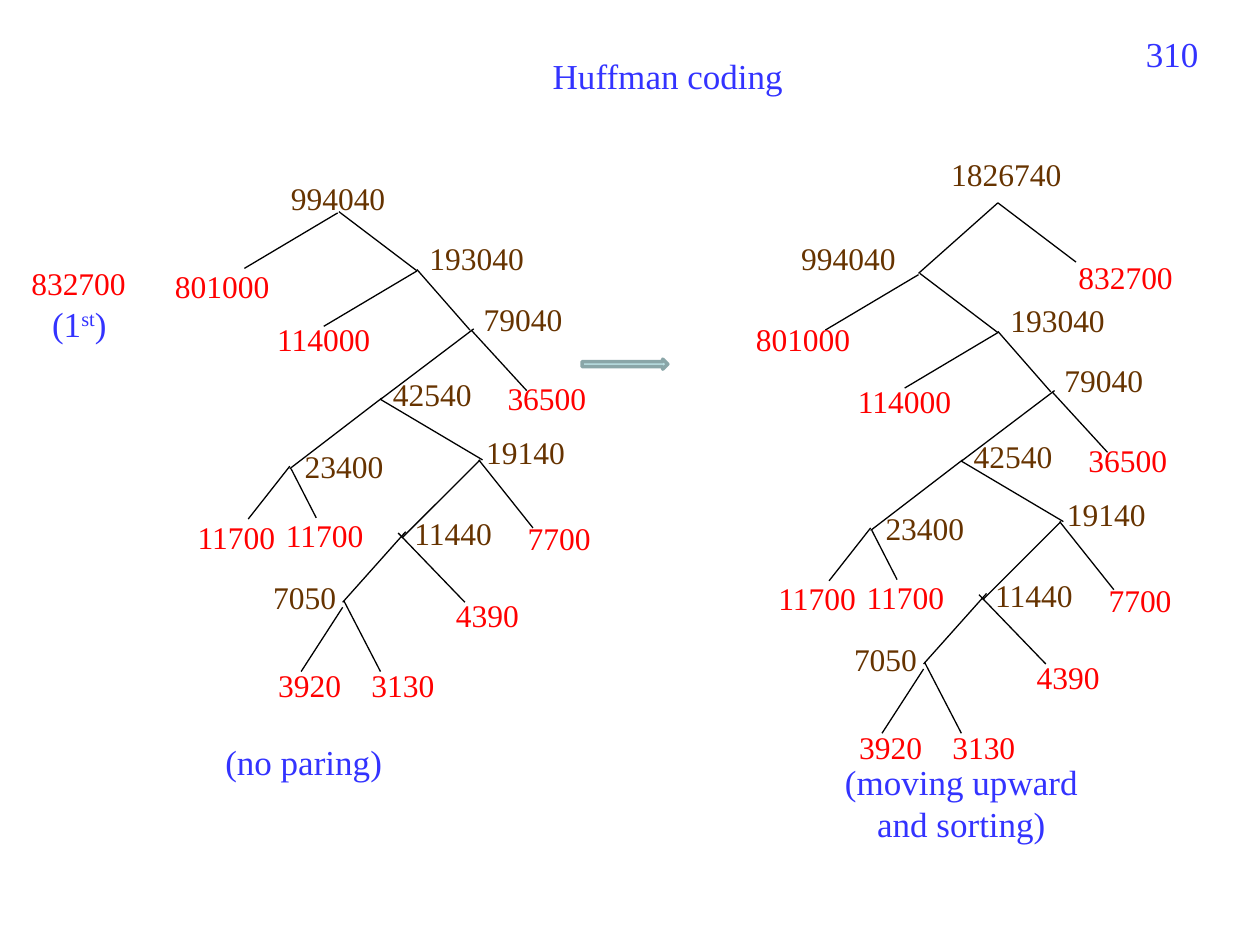
from dataclasses import dataclass
from lxml.etree import SubElement
from pptx import Presentation
from pptx.dml.color import RGBColor
from pptx.enum.shapes import MSO_CONNECTOR, MSO_SHAPE
from pptx.enum.text import MSO_ANCHOR, MSO_AUTO_SIZE, PP_ALIGN
from pptx.oxml.ns import qn
from pptx.util import Inches, Pt


@dataclass(frozen=True)
class Theme:
    font: str = "Times New Roman"
    heading: RGBColor = RGBColor(0x33, 0x33, 0xFF)
    leaf: RGBColor = RGBColor(0xFF, 0x00, 0x00)
    inner: RGBColor = RGBColor(0x66, 0x33, 0x00)
    edge: RGBColor = RGBColor(0, 0, 0)
    arrow: RGBColor = RGBColor(0xBB, 0xE0, 0xE3)
    arrow_line: RGBColor = RGBColor(0x8A, 0xA6, 0xA8)
    text_size: int = 20
    node_size: int = 18


T = Theme()
COLS, ROWS = 100, 75
CELL = Inches(0.1)

# Columns and rows from the tree's corner: (weight, column, row)
INNER = [("193040", 20.2, 4.8), ("79040", 24.5, 9.6), ("42540", 17.3, 15.6),
         ("19140", 24.7, 20.2), ("23400", 10.3, 21.3), ("11440", 19, 26.6),
         ("7050", 7.8, 31.7)]
LEAVES = [("114000", 8.1, 11.2), ("36500", 26.4, 15.9), ("11700", 1.8, 26.9),
          ("11700", 8.8, 26.8), ("7700", 28, 27), ("4390", 22.3, 33.1),
          ("3920", 8.2, 38.7), ("3130", 15.6, 38.7)]
# Each branching: left edge and right edge, as (start, end)
BRANCHES = [
    [((13.9, 3.2), (6.5, 7.6)), ((14, 3.1), (20.2, 7.8))],
    [((20.2, 7.8), (12.8, 12.2)), ((20.2, 7.7), (24.4, 12.5))],
    [((24.7, 12.4), (17.3, 18)), ((24.5, 12.5), (28.9, 17.3))],
    [((17.4, 17.9), (10.1, 23.5)), ((17.3, 18), (25.4, 22.8))],
    [((10.1, 23.3), (6.8, 27.5)), ((10.2, 23.5), (12.2, 27.4))],
    [((25.2, 22.8), (19, 29)), ((25.1, 22.8), (29.4, 28.2))],
    [((19.3, 28.5), (14.3, 34.1)), ((18.7, 28.6), (24, 34.1))],
    [((14.3, 34.5), (11, 39.6)), ((14.4, 34), (17.3, 39.6))],
]


def grid(*cells):
    return [round(c * CELL) for c in cells]


def write(sp, runs, color, size, align, wrap=True):
    """Fill a text shape with runs of (text, baseline)."""
    tf = sp.text_frame
    tf.word_wrap = wrap
    tf.auto_size = MSO_AUTO_SIZE.SHAPE_TO_FIT_TEXT
    tf.vertical_anchor = MSO_ANCHOR.TOP
    p = tf.paragraphs[0]
    p.alignment = align
    for text, baseline in runs:
        r = p.add_run()
        r.text = text
        r.font.name, r.font.size = T.font, Pt(size)
        r.font.color.rgb = color
        if baseline:
            r.font._element.set("baseline", str(baseline))


def caption(s, box, *runs, align=PP_ALIGN.CENTER):
    write(s.shapes.add_textbox(*grid(*box)), runs, T.heading, T.text_size, align)


def weight(s, text, x, y, color):
    """Write one node's weight in a box as wide as its digits."""
    sp = s.shapes.add_textbox(*grid(x, y, 1.25 * len(text) + 2, 4))
    write(sp, [(text, 0)], color, T.node_size, PP_ALIGN.LEFT, wrap=False)


def edge(s, start, end):
    line = s.shapes.add_connector(MSO_CONNECTOR.STRAIGHT, *grid(*start, *end))
    line.line.color.rgb = T.edge
    line.line.width = Pt(0.75)
    SubElement(line._element.spPr, qn("a:effectLst"))


def tree(s, box, top, first):
    """Draw the 994040 tree; top and first place its root and first leaf."""
    x, y = box
    for left_right in BRANCHES:
        for (x1, y1), (x2, y2) in left_right:
            edge(s, (x + x1, y + y1), (x + x2, y + y2))
    inner = [("994040", *top)] + INNER
    leaves = [("801000", *first)] + LEAVES
    for nodes, color in ((inner, T.inner), (leaves, T.leaf)):
        for text, dx, dy in nodes:
            weight(s, text, x + dx, y + dy, color)


def header(s, box):
    x, y, w, h = box
    title = s.shapes.title
    title.left, title.top, title.width, title.height = grid(x, y, w, h)
    write(title, [("Huffman coding", 0)], T.heading, T.text_size, PP_ALIGN.CENTER)
    caption(s, (x + 44.9, y - 1.7, 23.3, 5.2), ("310", 0), align=PP_ALIGN.RIGHT)


def before(s, box):
    x, y = box
    tree(s, box, (9.2, 0), (0, 7))
    weight(s, "832700", x - 11.4, y + 6.8, T.leaf)
    caption(s, (x - 11.6, y + 9.8, 10, 4.4), ("(1", 0), ("st", 30000), (")", 0))
    caption(s, (x + 0.1, y + 44.6, 22.2, 4.4), ("(no paring)", 0))


def after(s, box):
    x, y = box
    tree(s, box, (3.6, -0.1), (0, 6.3))
    root = (x + 20.2, y - 2.5)
    edge(s, root, (x + 13.9, y + 3.1))
    edge(s, root, (x + 26.4, y + 2.2))
    weight(s, "1826740", x + 15.5, y - 6.8, T.inner)
    weight(s, "832700", x + 25.6, y + 1.4, T.leaf)
    caption(s, (x + 7, y + 41.3, 20.6, 7.7), ("(moving upward and sorting)", 0))


def step_arrow(s, box):
    sp = s.shapes.add_shape(MSO_SHAPE.RIGHT_ARROW, *grid(*box))
    sp.shadow.inherit = False
    sp.fill.solid()
    sp.fill.fore_color.rgb = T.arrow
    sp.line.color.rgb = T.arrow_line
    sp.line.width = Pt(2)


def main():
    prs = Presentation()
    prs.slide_width, prs.slide_height = grid(COLS, ROWS)
    s = prs.slides.add_slide(prs.slide_layouts[5])
    header(s, (27.9, 3.8, 50.2, 4.4))
    before(s, (12.9, 13.7))
    step_arrow(s, (46.2, 28.5, 6.8, 0.8))
    after(s, (59, 18.6))
    prs.save("out.pptx")


if __name__ == "__main__":
    main()
